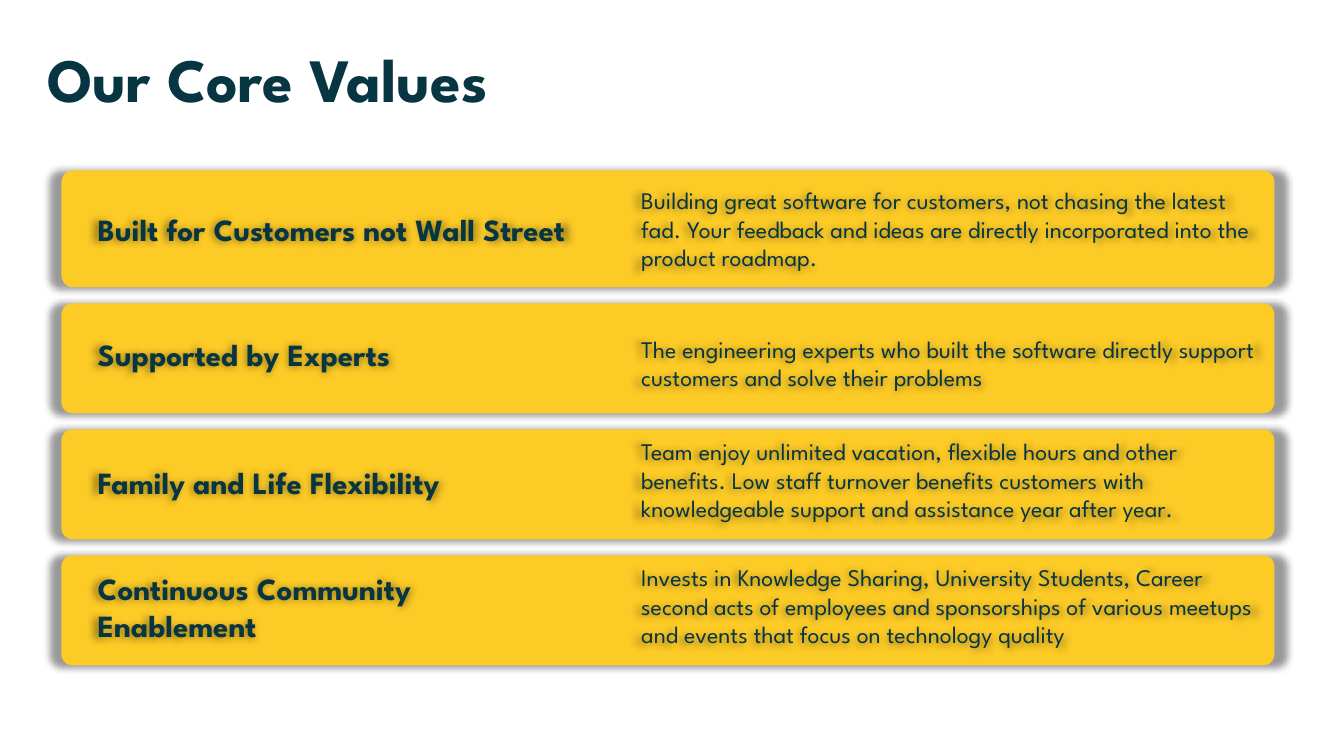
from dataclasses import dataclass
from lxml.etree import SubElement
from pptx import Presentation
from pptx.dml.color import RGBColor
from pptx.enum.shapes import MSO_SHAPE as Preset
from pptx.enum.text import MSO_ANCHOR as Anchor
from pptx.oxml.ns import qn
from pptx.util import Inches, Pt

# Content: heading, description, card height, drop of each text below the card top
TITLE = "Our Core Values"
VALUES = [
    ("Built for Customers not Wall Street",
     "Building great software for customers, not chasing the latest fad. Your feedback "
     "and ideas are directly incorporated into the product roadmap.",
     1.16, 0.08, 0.08),
    ("Supported by Experts",
     "The engineering experts who built the software directly support customers and "
     "solve their problems",
     1.09, 0, 0.09),
    ("Family and Life Flexibility",
     "Team enjoy unlimited vacation, flexible hours and other benefits. Low staff turnover "
     "benefits customers with knowledgeable support and assistance year after year.",
     1.09, 0.02, 0),
    ("Continuous Community Enablement",
     "Invests in Knowledge Sharing, University Students, Career second acts of employees "
     "and sponsorships of various meetups and events that focus on technology quality",
     1.09, 0.01, 0),
]


@dataclass(frozen=True)
class Theme:
    font: str = "League Spartan"
    ink: str = "073642"
    card: str = "FDCB26"
    shadow: str = "000000"
    title: int = 44
    heading: int = 22
    description: int = 17


THEME = Theme()

# Layout in inches
SLIDE_W, SLIDE_H = 13.33, 7.5
CARD_LEFT, CARD_W = 0.61, 12.03
CARDS_TOP, CARD_GAP = 1.69, 0.16
HEADING_LEFT, HEADING_W = 0.86, 4.97
DESCRIPTION_LEFT = 6.25
DESCRIPTION_W = CARD_LEFT + CARD_W - DESCRIPTION_LEFT
TEXT_H = 1
TEXT_INSET = 0.11


def add_glow(shape):
    """Soft centred shadow, slightly larger than the shape."""
    effects = SubElement(shape._element.spPr, qn("a:effectLst"))
    outer = SubElement(effects, qn("a:outerShdw"), blurRad=str(Pt(5)), sx="102000",
                       sy="102000", algn="ctr", rotWithShape="0")
    color = SubElement(outer, qn("a:srgbClr"), val=THEME.shadow)
    SubElement(color, qn("a:alpha"), val="40000")


def add_text(slide, words, left, top, width, height, size, bold, inset_x, inset_y):
    box = slide.shapes.add_textbox(*map(Inches, (left, top, width, height)))
    frame = box.text_frame
    frame.word_wrap = True
    frame.vertical_anchor = Anchor.MIDDLE
    frame.margin_left = frame.margin_right = Inches(inset_x)
    frame.margin_top = frame.margin_bottom = Inches(inset_y)
    run = frame.paragraphs[0].add_run()
    run.text = words
    run.font.name = THEME.font
    run.font.size = Pt(size)
    run.font.bold = bold
    run.font.color.rgb = RGBColor.from_string(THEME.ink)
    return box


def add_card(slide, top, height):
    card = slide.shapes.add_shape(
        Preset.ROUNDED_RECTANGLE, *map(Inches, (CARD_LEFT, top, CARD_W, height)))
    card.adjustments[0] = 0.1
    card.fill.solid()
    card.fill.fore_color.rgb = RGBColor.from_string(THEME.card)
    card.line.fill.background()
    add_glow(card)


def main():
    deck = Presentation()
    deck.slide_width, deck.slide_height = Inches(SLIDE_W), Inches(SLIDE_H)
    slide = deck.slides.add_slide(deck.slide_layouts[6])

    # Title
    title = add_text(slide, TITLE, 0.37, 0.4, 12.04, 0.84, THEME.title, True, 0.1, 0.05)
    title.text_frame.paragraphs[0].line_spacing = 0.9

    # One card per value, stacked with equal gaps
    top = CARDS_TOP
    for heading, description, height, heading_drop, description_drop in VALUES:
        add_card(slide, top, height)
        for words, left, width, drop, size, bold in (
            (heading, HEADING_LEFT, HEADING_W, heading_drop, THEME.heading, True),
            (description, DESCRIPTION_LEFT, DESCRIPTION_W, description_drop,
             THEME.description, False),
        ):
            add_glow(add_text(slide, words, left, top + drop, width, TEXT_H, size, bold,
                              TEXT_INSET, TEXT_INSET))
        top += height + CARD_GAP

    deck.save("out.pptx")


if __name__ == "__main__":
    main()
